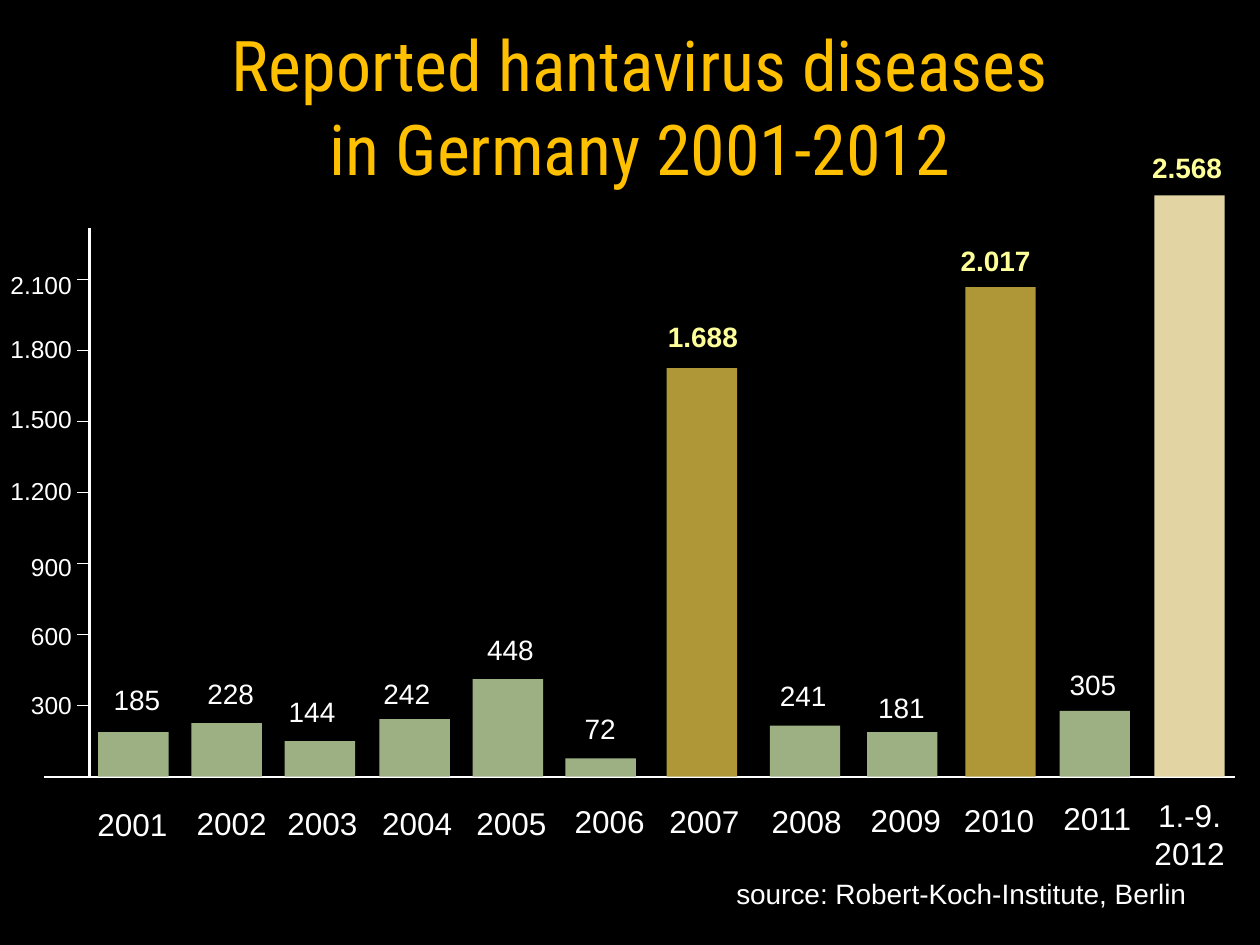
from lxml.etree import SubElement
from pptx import Presentation
from pptx.dml.color import RGBColor
from pptx.enum.shapes import MSO_CONNECTOR, MSO_SHAPE
from pptx.enum.text import MSO_ANCHOR, PP_ALIGN
from pptx.oxml.ns import qn
from pptx.util import Cm, Pt

BLACK = RGBColor(0x00, 0x00, 0x00)
WHITE = RGBColor(0xFF, 0xFF, 0xFF)
AMBER = RGBColor(0xFF, 0xC0, 0x00)
YELLOW = RGBColor(0xFF, 0xFF, 0x99)
GREEN = RGBColor(0x9C, 0xB0, 0x84)
GOLD = RGBColor(0xAF, 0x97, 0x38)
SAND = RGBColor(0xE2, 0xD5, 0xA3)

TITLE = "Reported hantavirus diseases\vin Germany 2001-2012"
SOURCE = "source: Robert-Koch-Institute, Berlin"

# Year, (centre, top) of its label; cases, (centre, top) of its label;
# (left, top) of the bar, bar colour. Positions in centimetres.
BARS = [
    ("2001", (2.67, 16.1), "185", (2.76, 13.64), (1.98, 14.76), GREEN),
    ("2002", (4.67, 16.08), "228", (4.65, 13.51), (3.86, 14.58), GREEN),
    ("2003", (6.5, 16.08), "144", (6.29, 13.87), (5.74, 14.94), GREEN),
    ("2004", (8.41, 16.08), "242", (8.2, 13.51), (7.65, 14.5), GREEN),
    ("2005", (10.31, 16.08), "448", (10.29, 12.62), (9.53, 13.69), GREEN),
    ("2006", (12.29, 16.05), "72", (12.1, 14.22), (11.4, 15.29), GREEN),
    ("2007", (14.2, 16.05), "1.688", (14.17, 6.32), (13.44, 7.42), GOLD),
    ("2008", (16.26, 16.05), "241", (16.19, 13.56), (15.52, 14.63), GREEN),
    ("2009", (18.26, 16.03), "181", (18.17, 13.79), (17.48, 14.76), GREEN),
    ("2010", (20.14, 16.03), "2.017", (20.07, 4.78), (19.46, 5.79), GOLD),
    ("2011", (22.12, 15.98), "305", (22.03, 13.34), (21.36, 14.33), GREEN),
    ("1.-9.\n2012", (23.98, 15.93), "2.568", (23.93, 2.92), (23.27, 3.94), SAND),
]
# Axis label and its top
SCALE = [("300", 13.79), ("600", 12.4), ("900", 11), ("1.200", 9.47),
         ("1.500", 8.03), ("1.800", 6.6), ("2.100", 5.31)]

BASELINE = 15.66
AXIS_X = 1.8
BAR_WIDTH = 1.42
LABEL_WIDTH = 1.93
FIRST_TICK, TICK_STEP, TICK_LENGTH = 14.22, 1.43, 0.25

deck = Presentation()
deck.slide_width, deck.slide_height = Cm(25.4), Cm(19.05)
page = deck.slides.add_slide(deck.slide_layouts[6])
page.background.fill.solid()
page.background.fill.fore_color.rgb = BLACK


def add_text(text, left, top, width, height, size, color=WHITE, bold=False,
             font="Arial", align=PP_ALIGN.CENTER, wrap=False):
    box = page.shapes.add_textbox(Cm(left), Cm(top), Cm(width), Cm(height))
    frame = box.text_frame
    frame.text = text
    frame.word_wrap = wrap
    for para in frame.paragraphs:
        para.alignment = align
        for span in para.runs:
            span.font.name, span.font.size = font, Pt(size)
            span.font.bold = bold
            span.font.color.rgb = color
    return frame


def add_line(x1, y1, x2, y2, width):
    line = page.shapes.add_connector(
        MSO_CONNECTOR.STRAIGHT, Cm(x1), Cm(y1), Cm(x2), Cm(y2))
    line.line.color.rgb = WHITE
    line.line.width = Pt(width)
    SubElement(line._element.spPr, qn("a:effectLst"))


# Axes and scale
add_line(AXIS_X, BASELINE, AXIS_X, 4.6, 1.5)
add_line(0.89, BASELINE, 24.89, BASELINE, 1.5)
for index, (label, top) in enumerate(SCALE):
    tick = FIRST_TICK - index * TICK_STEP
    add_line(AXIS_X - TICK_LENGTH, tick, AXIS_X, tick, 0.75)
    add_text(label, -0.05, top, 1.75, 0.86, 14, align=PP_ALIGN.RIGHT)

# Bars with their case numbers and years
for year, year_at, cases, cases_at, (left, top), color in BARS:
    bar = page.shapes.add_shape(MSO_SHAPE.RECTANGLE, Cm(left), Cm(top),
                                Cm(BAR_WIDTH), Cm(BASELINE - top))
    bar.shadow.inherit = False
    bar.fill.solid()
    bar.fill.fore_color.rgb = color
    bar.line.fill.background()

    high = color != GREEN
    add_text(cases, cases_at[0] - LABEL_WIDTH / 2, cases_at[1], LABEL_WIDTH,
             0.94, 16, YELLOW if high else WHITE, high)
    add_text(year, year_at[0] - LABEL_WIDTH / 2, year_at[1], LABEL_WIDTH,
             1.8 if "\n" in year else 1.02, 18)

# Title and source
title = add_text(TITLE, 0.2, 0.53, 25.4, 3.18, 40, AMBER,
                 font="Roboto Condensed", wrap=True)
title.margin_left = title.margin_right = Cm(0)
title.margin_top = title.margin_bottom = Cm(0)
source = add_text(SOURCE, 13.46, 17.48, 11.84, 1.07, 16, wrap=True)
for frame in (title, source):
    frame.vertical_anchor = MSO_ANCHOR.MIDDLE

deck.save("out.pptx")
